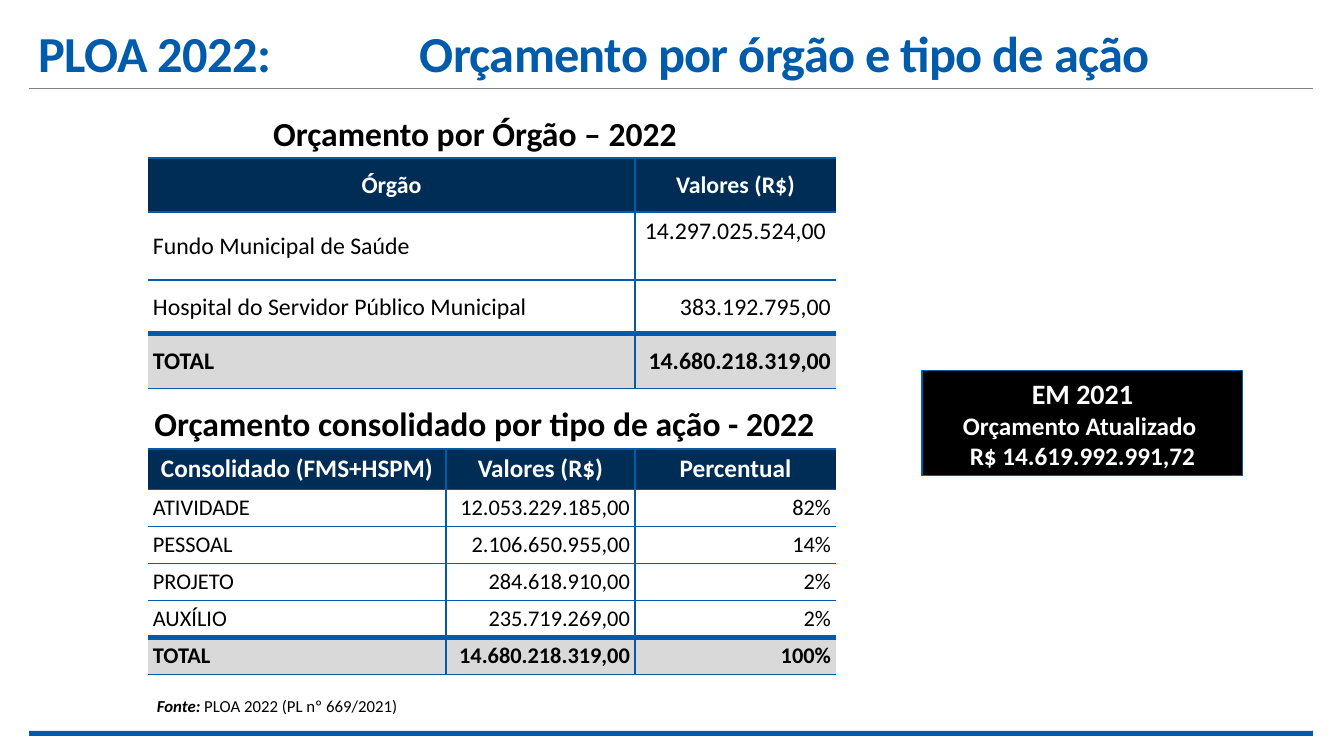
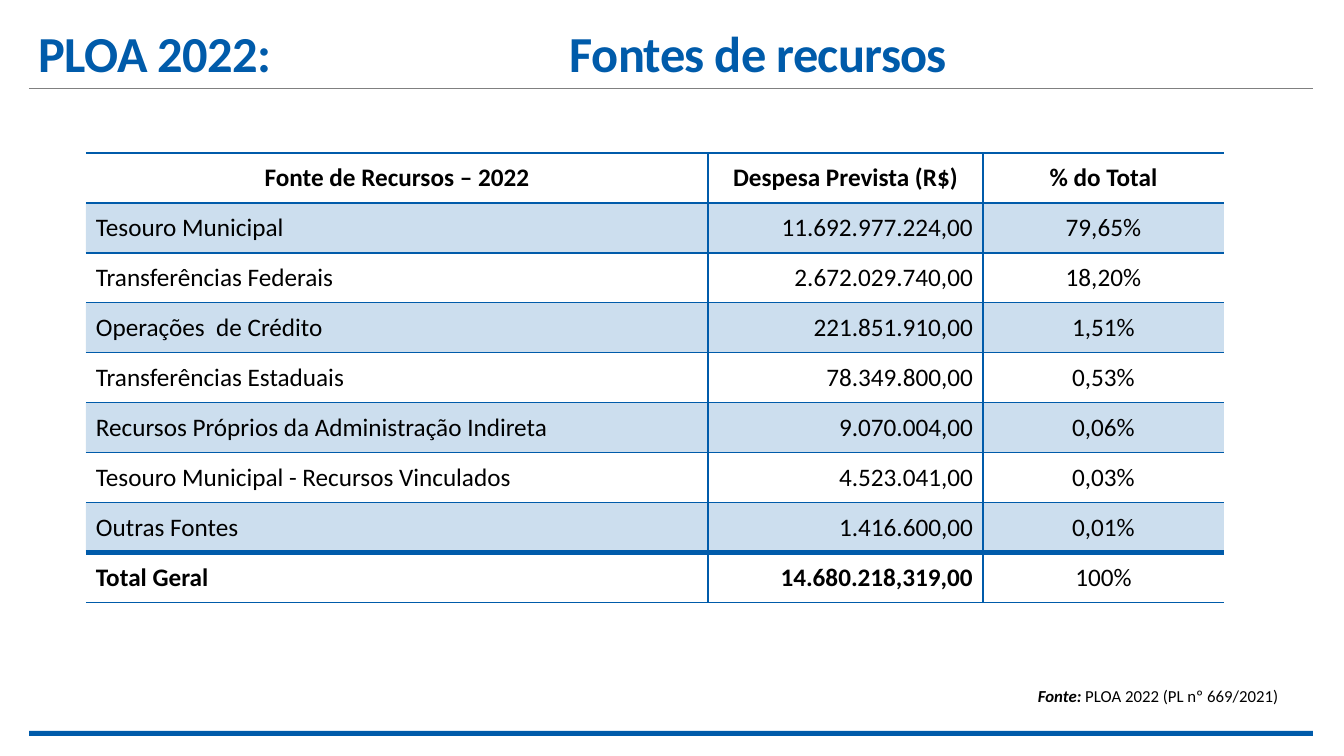
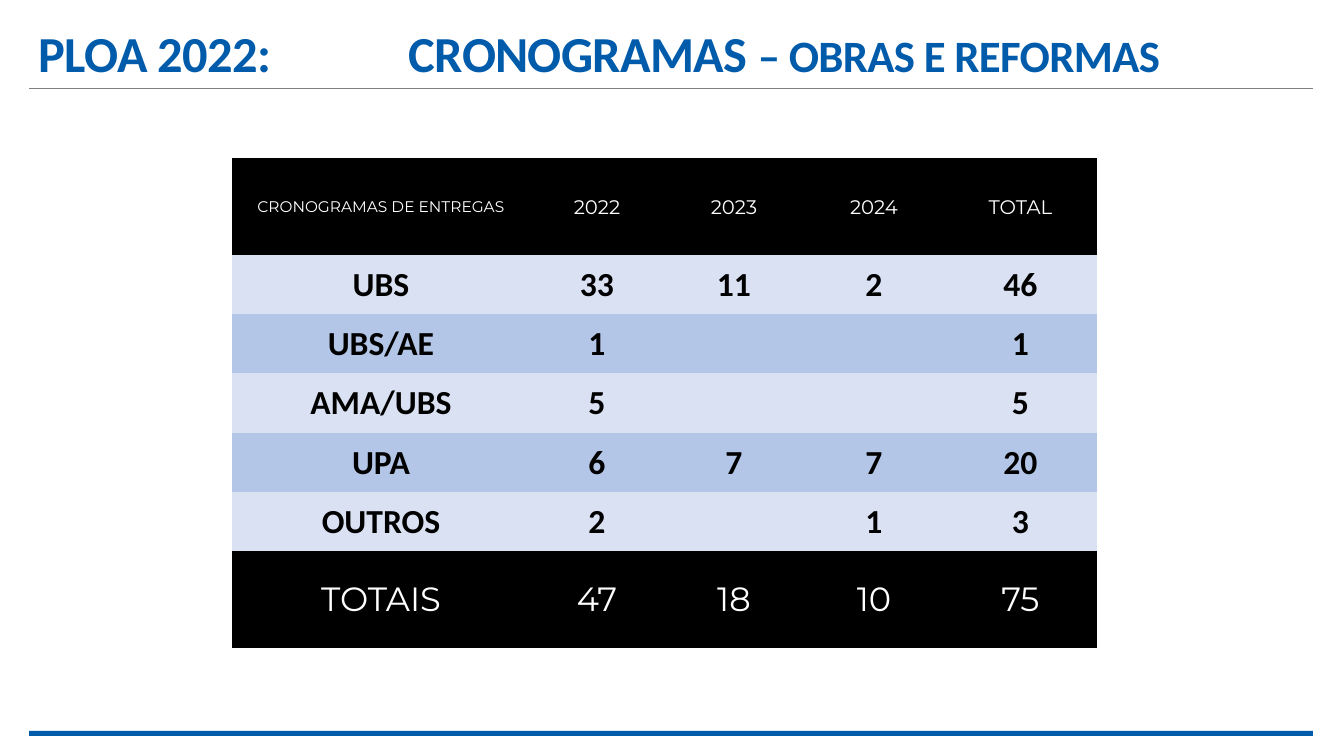
from lxml.etree import SubElement
from pptx import Presentation
from pptx.dml.color import RGBColor
from pptx.enum.shapes import MSO_CONNECTOR, MSO_SHAPE
from pptx.enum.text import MSO_ANCHOR, PP_ALIGN
from pptx.oxml.ns import qn
from pptx.util import Emu, Pt

COLORS = {
    "blue": "005BAA",
    "navy": "002D55",
    "black": "000000",
    "white": "FFFFFF",
    "rule": "808080",
    "total": "D9D9D9",
    "light": "D9E1F2",
    "medium": "B4C6E7",
}
EMU_PER_PX = 914400 / 100.8
SLIDE_SIZE = (1344, 756)
FRAME_LEFT, FRAME_WIDTH = 29, 1284
FRAME_RIGHT = FRAME_LEFT + FRAME_WIDTH
LEFT, CENTER, RIGHT = PP_ALIGN.LEFT, PP_ALIGN.CENTER, PP_ALIGN.RIGHT


def px(*lengths):
    """Turn px lengths into a list of EMU lengths."""
    return [Emu(round(length * EMU_PER_PX)) for length in lengths]


def color(name):
    """Return the named colour."""
    return RGBColor.from_string(COLORS[name])


def apply_format(target, values):
    """Set each attribute of the target from a dict."""
    for name, value in values.items():
        setattr(target, name, value)


def text_style(size, color_name="black", bold=False, italic=False, name="Calibri"):
    """Describe a text style as font values and a colour name."""
    font = {"size": Pt(size), "bold": bold, "italic": italic, "name": name}
    return {"font": font, "color": color_name}


def add_run(paragraph, text, style):
    """Add a styled run to a paragraph."""
    run = paragraph.add_run()
    run.text = text
    apply_format(run.font, style["font"])
    run.font.color.rgb = color(style["color"])
    return run


def add_text(slide, box, runs, align=LEFT, anchor=MSO_ANCHOR.TOP):
    """Add a one-paragraph text box and return its paragraph."""
    frame = slide.shapes.add_textbox(*px(*box)).text_frame
    apply_format(frame, {"word_wrap": True, "vertical_anchor": anchor})
    paragraph = frame.paragraphs[0]
    paragraph.alignment = align
    for text, style in runs:
        add_run(paragraph, text, style)
    return paragraph


def add_rectangle(slide, box, fill):
    """Add a filled rectangle without line or shadow."""
    shape = slide.shapes.add_shape(MSO_SHAPE.RECTANGLE, *px(*box))
    shape.shadow.inherit = False
    shape.fill.solid()
    shape.fill.fore_color.rgb = color(fill)
    shape.line.fill.background()
    return shape


def add_frame(slide, topic_left, topic_runs):
    """Add the title, its rule and the bottom band."""
    add_rectangle(slide, (FRAME_LEFT, 731, FRAME_WIDTH, 5), "blue")
    rule = slide.shapes.add_connector(
        MSO_CONNECTOR.STRAIGHT, *px(FRAME_LEFT, 88, FRAME_RIGHT, 88))
    rule.line.color.rgb = color("rule")
    rule.line.width = Pt(0.5)
    SubElement(rule.element.spPr, qn("a:effectLst"))

    runs = [("PLOA 2022:\t", 36)] + topic_runs
    styled = [(text, text_style(size, "blue", True)) for text, size in runs]
    box = (FRAME_LEFT, 15, FRAME_WIDTH, 73)
    paragraph = add_text(slide, box, styled, anchor=MSO_ANCHOR.BOTTOM)
    tabs = SubElement(paragraph._p.get_or_add_pPr(), qn("a:tabLst"))
    position = px(topic_left - FRAME_LEFT - 10)[0]
    SubElement(tabs, qn("a:tab"), pos=str(position), algn="l")
    paragraph.line_spacing = 0.85
    for run in paragraph.runs:
        run.font._element.set("spc", "-50")


def set_borders(cell, widths):
    """Draw the left, right, top and bottom borders, none where the width is 0."""
    properties = cell._tc.get_or_add_tcPr()
    for side, width in zip("LRTB", widths):
        line = SubElement(properties, qn(f"a:ln{side}"), w=str(Pt(width)))
        if width:
            fill = SubElement(line, qn("a:solidFill"))
            SubElement(fill, qn("a:srgbClr"), val=COLORS["blue"])
        else:
            SubElement(line, qn("a:noFill"))


def set_fill(cell, fill, alpha=None):
    """Fill a cell, with an optional opacity in percent."""
    if fill is None:
        cell.fill.background()
        return
    cell.fill.solid()
    cell.fill.fore_color.rgb = color(fill)
    if alpha:
        value = cell._tc.tcPr.find(qn("a:solidFill"))[0]
        SubElement(value, qn("a:alpha"), val=str(alpha * 1000))


def row_style(text, fill=None, alpha=None, aligns=None):
    """Describe a table row."""
    return {"text": text, "fill": fill, "alpha": alpha, "aligns": aligns}


def add_grid(slide, origin, columns, heights, rows, styles, margins, ruled=True):
    """Add a table at the origin and return it."""
    last_row, last_column = len(rows) - 1, len(columns) - 1
    box = (*origin, sum(columns), sum(heights))
    table = slide.shapes.add_table(len(rows), len(columns), *px(*box)).table
    apply_format(table, {"first_row": False, "horz_banding": False})
    for column, width in zip(table.columns, px(*columns)):
        column.width = width
    for row, height in zip(table.rows, px(*heights)):
        row.height = height
    sides = ("margin_left", "margin_right", "margin_top", "margin_bottom")
    cell_format = dict(zip(sides, px(*margins)), vertical_anchor=MSO_ANCHOR.MIDDLE)
    for i, (values, style) in enumerate(zip(rows, styles)):
        for j, value in enumerate(values):
            cell = table.cell(i, j)
            apply_format(cell, cell_format)
            widths = (j > 0, j < last_column,
                      4 if i == last_row else 1, 4 if i == last_row - 1 else 1)
            set_borders(cell, widths if ruled else (0, 0, 0, 0))
            set_fill(cell, style["fill"], style["alpha"])
            paragraph = cell.text_frame.paragraphs[0]
            paragraph.alignment = style["aligns"][j] if style["aligns"] else CENTER
            if value:
                add_run(paragraph, value, style["text"])
    return table


def add_source(slide, left, top):
    """Add the source note."""
    runs = [("Fonte:", text_style(12, bold=True, italic=True)),
            (" PLOA 2022 (PL nº 669/2021)", text_style(12))]
    add_text(slide, (left, top, 273, 30), runs)


def add_callout(slide, box):
    """Add the black box with the updated budget of the year before."""
    shape = add_rectangle(slide, box, "black")
    shape.line.color.rgb = color("blue")
    shape.line.width = Pt(0.75)
    frame = shape.text_frame
    apply_format(frame, {"word_wrap": True, "vertical_anchor": MSO_ANCHOR.MIDDLE})
    lines = [("EM 2021", 20), ("Orçamento Atualizado ", 18),
             ("R$ 14.619.992.991,72", 18)]
    for i, (text, size) in enumerate(lines):
        paragraph = frame.add_paragraph() if i else frame.paragraphs[0]
        paragraph.alignment = CENTER
        add_run(paragraph, text, text_style(size, "white", True))


def budget_styles(header_size, body_size, body_count, aligns):
    """Return the row styles of a budget table with header and total."""
    header = row_style(text_style(header_size, "white", True), "navy")
    body = row_style(text_style(body_size), aligns=aligns)
    total = row_style(text_style(body_size, bold=True), "total", aligns=aligns)
    return [header] + [body] * body_count + [total]


def build_budget_slide(slide):
    """Build the slide on budget by body and type of action."""
    add_frame(slide, 420, [("Orçamento por órgão e tipo de ação", 36)])
    caption = text_style(24, bold=True)
    add_text(slide, (0, 108, 950, 50), [("Orçamento por Órgão – 2022", caption)], CENTER)
    add_text(slide, (0, 398, 969, 50),
             [("Orçamento consolidado por tipo de ação - 2022", caption)], CENTER)
    margins = (5, 5, 5, 5)
    bodies = add_grid(
        slide, (148, 158), (487, 201), (54, 68, 54, 55),
        [("Órgão", "Valores (R$)"),
         ("Fundo Municipal de Saúde", "14.297.025.524,00"),
         ("Hospital do Servidor Público Municipal", "383.192.795,00"),
         ("TOTAL", "14.680.218.319,00")],
        budget_styles(17, 17, 2, (LEFT, RIGHT)), margins)
    apply_format(bodies.cell(1, 1), {"vertical_anchor": MSO_ANCHOR.TOP,
                                     "margin_right": px(10)[0]})
    add_grid(
        slide, (148, 449), (298, 189, 201), (40,) + (37,) * 5,
        [("Consolidado (FMS+HSPM)", "Valores (R$)", "Percentual"),
         ("ATIVIDADE", "12.053.229.185,00", "82%"),
         ("PESSOAL", "2.106.650.955,00", "14%"),
         ("PROJETO", "284.618.910,00", "2%"),
         ("AUXÍLIO", "235.719.269,00", "2%"),
         ("TOTAL", "14.680.218.319,00", "100%")],
        budget_styles(18, 16, 4, (LEFT, RIGHT, RIGHT)), margins)
    add_source(slide, 147, 691)
    add_callout(slide, (922, 371, 321, 105))


def build_sources_slide(slide):
    """Build the slide on sources of funds."""
    add_frame(slide, 570, [("Fontes de recursos", 36)])
    rows = [
        ("Fonte de Recursos – 2022", "Despesa Prevista (R$)", "% do Total"),
        ("Tesouro Municipal", "11.692.977.224,00", "79,65%"),
        ("Transferências Federais", "2.672.029.740,00", "18,20%"),
        ("Operações  de Crédito", "221.851.910,00", "1,51%"),
        ("Transferências Estaduais", "78.349.800,00", "0,53%"),
        ("Recursos Próprios da Administração Indireta", "9.070.004,00", "0,06%"),
        ("Tesouro Municipal - Recursos Vinculados", "4.523.041,00", "0,03%"),
        ("Outras Fontes", "1.416.600,00", "0,01%"),
        ("Total Geral", "14.680.218,319,00", "100%"),
    ]
    aligns = (LEFT, RIGHT, CENTER)
    plain, strong = text_style(18), text_style(18, bold=True)
    shaded = row_style(plain, "blue", 20, aligns)
    clear = row_style(plain, aligns=aligns)
    styles = ([row_style(strong)] + [shaded, clear] * 3 + [shaded]
              + [row_style(strong, aligns=aligns)])
    table = add_grid(slide, (86, 153), (622, 275, 241), (50,) * len(rows),
                     rows, styles, (10, 10, 5, 5))
    table.cell(len(rows) - 1, 2).text_frame.paragraphs[0].runs[0].font.bold = False
    add_source(slide, 1028, 681)


def build_schedule_slide(slide):
    """Build the slide on the schedule of works."""
    add_frame(slide, 409, [("CRONOGRAMAS ", 36), ("– OBRAS E REFORMAS", 32)])
    rows = [
        ("CRONOGRAMAS DE ENTREGAS", "2022", "2023", "2024", "TOTAL"),
        ("UBS", "33", "11", "2", "46"),
        ("UBS/AE", "1", "", "", "1"),
        ("AMA/UBS", "5", "", "", "5"),
        ("UPA", "6", "7", "7", "20"),
        ("OUTROS", "2", "", "1", "3"),
        ("TOTAIS", "47", "18", "10", "75"),
    ]
    strong = text_style(24, bold=True)
    light, medium = row_style(strong, "light"), row_style(strong, "medium")
    header, total = [row_style(text_style(size, "white", name="Montserrat"), "black")
                     for size in (14, 24)]
    styles = [header, light, medium, light, medium, light, total]
    table = add_grid(slide, (232, 158), (298, 134, 140, 140, 153),
                     (97, 59, 59, 60, 59, 59, 97), rows, styles, (1, 1, 1, 0), False)
    table.cell(0, 0).text_frame.paragraphs[0].runs[0].font.size = Pt(11)


def main():
    """Build and save the presentation."""
    presentation = Presentation()
    presentation.slide_width, presentation.slide_height = px(*SLIDE_SIZE)
    for build in (build_budget_slide, build_sources_slide, build_schedule_slide):
        build(presentation.slides.add_slide(presentation.slide_layouts[6]))
    presentation.save("out.pptx")


if __name__ == "__main__":
    main()
